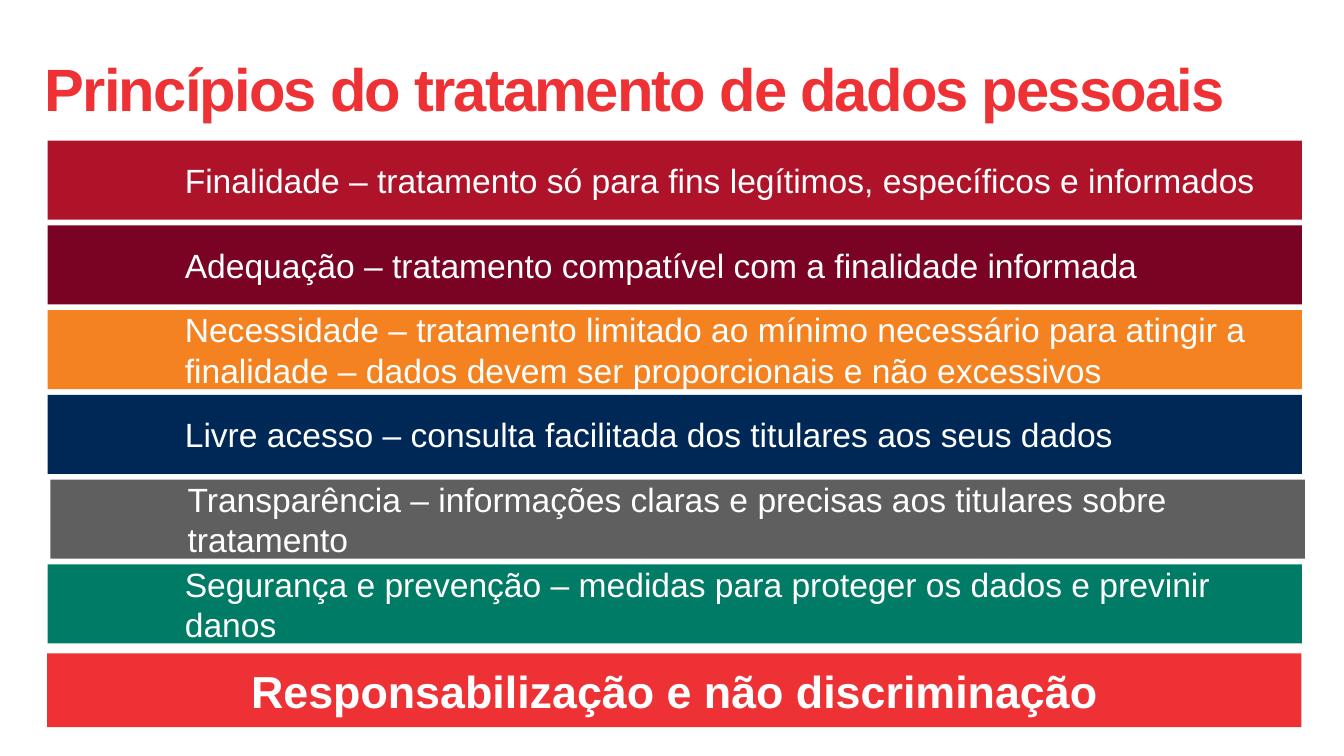
import pptx
import pptx.util
import pptx.dml.color
import pptx.enum.shapes
import pptx.enum.text

Pt = pptx.util.Pt
ALIGN = pptx.enum.text.PP_ALIGN

HUES = {
    "red": "EE3135", "wine": "AE132A", "plum": "7A0223", "orange": "F58220",
    "navy": "002856", "gray": "5F5F5F", "green": "007B66", "white": "FFFFFF",
}
TITLE = "Princípios do tratamento de dados pessoais"
ROWS = [
    ("wine", 0, "Finalidade – tratamento só para fins legítimos, específicos e informados"),
    ("plum", 0, "Adequação – tratamento compatível com a finalidade informada"),
    ("orange", 0, "Necessidade – tratamento limitado ao mínimo necessário para atingir a "
                  "finalidade – dados devem ser proporcionais e não excessivos"),
    ("navy", 0, "Livre acesso – consulta facilitada dos titulares aos seus dados"),
    ("gray", 1.5, "Transparência – informações claras e precisas aos titulares sobre tratamento"),
    ("green", 0, "Segurança e prevenção – medidas para proteger os dados e previnir danos"),
]
FOOTER = "Responsabilização e não discriminação"

LEFT, TOP, WIDE, HIGH, STEP = 25.5, 75.4, 672, 42.3, 45.4
PAD, INDENT = 6, 73.5


def color(name):
    return pptx.dml.color.RGBColor.from_string(HUES[name])


def write(shape, text, size, hue, bold, align, pads):
    frame = shape.text_frame
    frame.word_wrap = True
    frame.vertical_anchor = pptx.enum.text.MSO_ANCHOR.MIDDLE
    frame.margin_left, frame.margin_top, frame.margin_right, frame.margin_bottom = map(Pt, pads)
    para = frame.paragraphs[0]
    para.alignment = align
    run = para.add_run()
    run.text = text
    run.font.name = "Arial"
    run.font.size = Pt(size)
    run.font.bold = bold
    run.font.color.rgb = color(hue)
    return para, run


def add_bar(slide, left, top, high, hue):
    kind = pptx.enum.shapes.MSO_SHAPE.RECTANGLE
    bar = slide.shapes.add_shape(kind, Pt(left), Pt(top), Pt(WIDE), Pt(high))
    bar.shadow.inherit = False
    bar.fill.solid()
    bar.fill.fore_color.rgb = color(hue)
    bar.line.fill.background()
    return bar


def main():
    deck = pptx.Presentation()
    deck.slide_width, deck.slide_height = Pt(720), Pt(405)
    slide = deck.slides.add_slide(deck.slide_layouts[6])

    box = slide.shapes.add_textbox(Pt(24), Pt(32.4), Pt(670), Pt(36))
    para, run = write(box, TITLE, 32, "red", True, ALIGN.LEFT, (0, 0, 0, 0))
    para.line_spacing = 0.8
    run.font._element.set("spc", "-100")

    for i, (hue, shift, text) in enumerate(ROWS):
        bar = add_bar(slide, LEFT + shift, TOP + i * STEP, HIGH, hue)
        write(bar, text, 18, "white", False, ALIGN.LEFT, (INDENT, PAD, PAD, PAD))

    bar = add_bar(slide, 25.2, 350, 39.6, "red")
    write(bar, FOOTER, 24, "white", True, ALIGN.CENTER, (PAD, PAD, PAD, PAD))
    deck.save("out.pptx")


if __name__ == "__main__":
    main()
